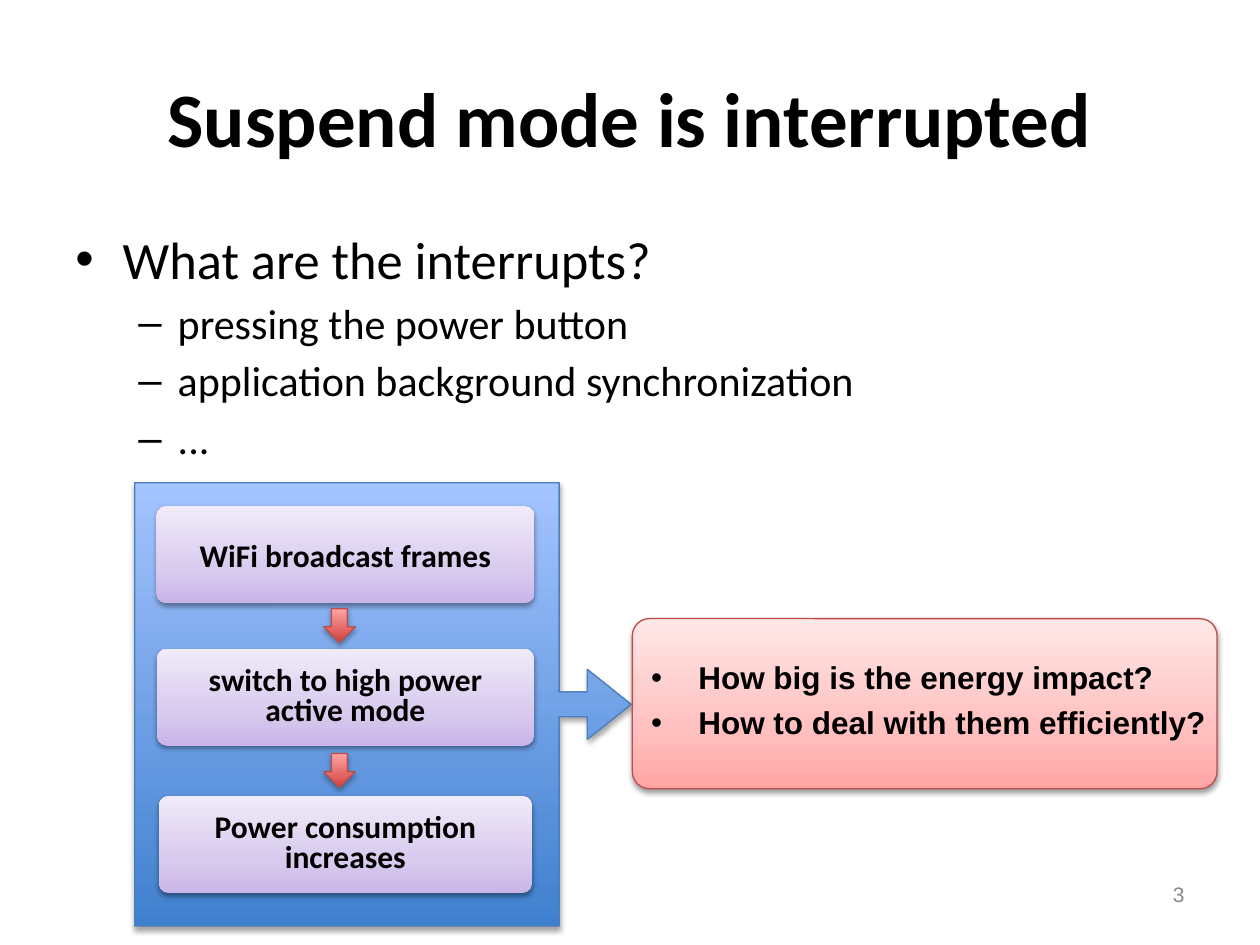
"""Build the slide on what interrupts suspend mode."""
import pptx
import pptx.util
import pptx.dml.color
import pptx.enum.shapes
import pptx.enum.text
import pptx.oxml
import pptx.oxml.ns

Pt = pptx.util.Pt
RGB = pptx.dml.color.RGBColor
SHAPE = pptx.enum.shapes.MSO_SHAPE
ALIGN = pptx.enum.text.PP_ALIGN
ANCHOR = pptx.enum.text.MSO_ANCHOR
qn = pptx.oxml.ns.qn

BLACK = RGB(0x00, 0x00, 0x00)
GREY = RGB(0x89, 0x89, 0x89)
BLUE_LINE = RGB(0x4B, 0x7E, 0xBC)
RED_LINE = RGB(0xBF, 0x4C, 0x48)
BLUE_FADE = [(0, RGB(0x3F, 0x80, 0xCE)), (100, RGB(0xA4, 0xC4, 0xFF))]
RED_FADE = [(0, RGB(0xD1, 0x40, 0x3C)), (100, RGB(0xFF, 0xA6, 0xA5))]
PINK_FADE = [(0, RGB(0xFF, 0xA6, 0xA5)), (35, RGB(0xFF, 0xC0, 0xBF)),
             (100, RGB(0xFF, 0xE7, 0xE7))]
LILAC_FADE = [(0, RGB(0xC9, 0xB5, 0xE8)), (35, RGB(0xD8, 0xCB, 0xEE)),
              (100, RGB(0xF0, 0xEA, 0xF9))]
STRONG_SHADOW = (38, 1.6)
SOFT_SHADOW = (35, 1.8)
STEP_CENTER = 197.4


def add_xml(parent, tag, **attrs):
    child = parent.makeelement(qn(tag), {k: str(v) for k, v in attrs.items()})
    parent.append(child)
    return child


def set_fade(sp, stops):
    sp.fill.gradient()
    sp.fill.gradient_angle = 90
    gs_list = sp._element.spPr.find(".//" + qn("a:gsLst"))
    for gs in list(gs_list):
        gs_list.remove(gs)
    for position, color in stops:
        gs = add_xml(gs_list, "a:gs", pos=position * 1000)
        add_xml(gs, "a:srgbClr", val=color)


def set_shadow(sp, alpha, distance):
    sp.shadow.inherit = False
    effects = sp._element.spPr.find(qn("a:effectLst"))
    shadow = add_xml(effects, "a:outerShdw", blurRad=Pt(3.1), dist=Pt(distance),
                     dir=5400000, rotWithShape=0)
    color = add_xml(shadow, "a:srgbClr", val=BLACK)
    add_xml(color, "a:alpha", val=alpha * 1000)


def add_block(s, kind, box, fade, shadow, line=None, adjustments=()):
    sp = s.shapes.add_shape(kind, *map(Pt, box))
    for i, value in enumerate(adjustments):
        sp.adjustments[i] = value
    set_fade(sp, fade)
    if line is None:
        sp.line.fill.background()
    else:
        sp.line.color.rgb = line
        sp.line.width = Pt(0.75)
    set_shadow(sp, *shadow)
    return sp


def add_textbox(s, box, anchor=ANCHOR.TOP):
    tf = s.shapes.add_textbox(*map(Pt, box)).text_frame
    tf.word_wrap = True
    tf.vertical_anchor = anchor
    return tf


def add_paragraph(tf, text, size, font="Calibri", color=BLACK, bold=False,
                  align=ALIGN.LEFT):
    p = tf.paragraphs[0]
    if p.runs:
        p = tf.add_paragraph()
    p.alignment = align
    r = p.add_run()
    r.text = text
    r.font.size = Pt(size)
    r.font.name = font
    r.font.bold = bold
    r.font.color.rgb = color
    return p


def set_bullet(p, char, margin, hanging):
    pPr = p._p.get_or_add_pPr()
    pPr.set("marL", str(Pt(margin)))
    pPr.set("indent", str(-Pt(hanging)))
    add_xml(pPr, "a:buFont", typeface="Arial")
    add_xml(pPr, "a:buChar", char=char)


def add_step(s, text, top, width, spacing):
    box = (STEP_CENTER - width / 2, top, width, 55.4)
    sp = add_block(s, SHAPE.ROUNDED_RECTANGLE, box, LILAC_FADE, STRONG_SHADOW,
                   adjustments=[0.1])
    tf = sp.text_frame
    tf.word_wrap = True
    tf.vertical_anchor = ANCHOR.MIDDLE
    p = add_paragraph(tf, text, 18, bold=True, align=ALIGN.CENTER)
    p.line_spacing = spacing


def add_interrupts(s):
    tf = add_textbox(s, (36, 126, 648, 356.4))
    p = add_paragraph(tf, "What are the interrupts?", 30)
    set_bullet(p, "•", 27, 27)
    for text in ("pressing the power button",
                 "application background synchronization", "..."):
        p = add_paragraph(tf, text, 24)
        p.level = 1
        p.space_before = Pt(4.2)
        set_bullet(p, "–", 58.5, 22.5)


def add_questions(s):
    add_block(s, SHAPE.ROUNDED_RECTANGLE, (361.4, 353.5, 334.1, 97.2), PINK_FADE,
              STRONG_SHADOW, RED_LINE, [0.1])
    tf = add_textbox(s, (365, 375.1, 342.7, 54))
    for text in ("How big is the energy impact?",
                 "How to deal with them efficiently?"):
        p = add_paragraph(tf, text, 18, "Arial", bold=True)
        p.line_spacing = 0.9
        p.space_after = Pt(6.3)
        set_bullet(p, "•", 27, 27)


def main():
    prs = pptx.Presentation()
    prs.slide_width, prs.slide_height = Pt(720), Pt(540)
    s = prs.slides.add_slide(prs.slide_layouts[6])

    add_block(s, SHAPE.RIGHT_ARROW_CALLOUT, (77, 275.8, 283.7, 253.4), BLUE_FADE,
              SOFT_SHADOW, BLUE_LINE, [0.056, 0.079, 0.099, 0.855])
    title = add_textbox(s, (36, 21.6, 648, 90), ANCHOR.MIDDLE)
    add_paragraph(title, "Suspend mode is interrupted", 44, bold=True,
                  align=ALIGN.CENTER)
    add_interrupts(s)
    number = add_textbox(s, (516.2, 500.4, 167.8, 28.8))
    add_paragraph(number, "3", 12, "Arial", GREY, align=ALIGN.RIGHT)

    for step in (("WiFi broadcast frames", 289.4, 216, 1.0),
                 ("switch to high power active mode", 370.8, 215.3, 0.8),
                 ("Power consumption increases", 455, 213.1, 0.8)):
        add_step(s, *step)
    for top in (347.8, 430.6):
        add_block(s, SHAPE.DOWN_ARROW, (185, top, 18, 19.4), RED_FADE,
                  SOFT_SHADOW, RED_LINE)
    add_questions(s)
    prs.save("out.pptx")


if __name__ == "__main__":
    main()
